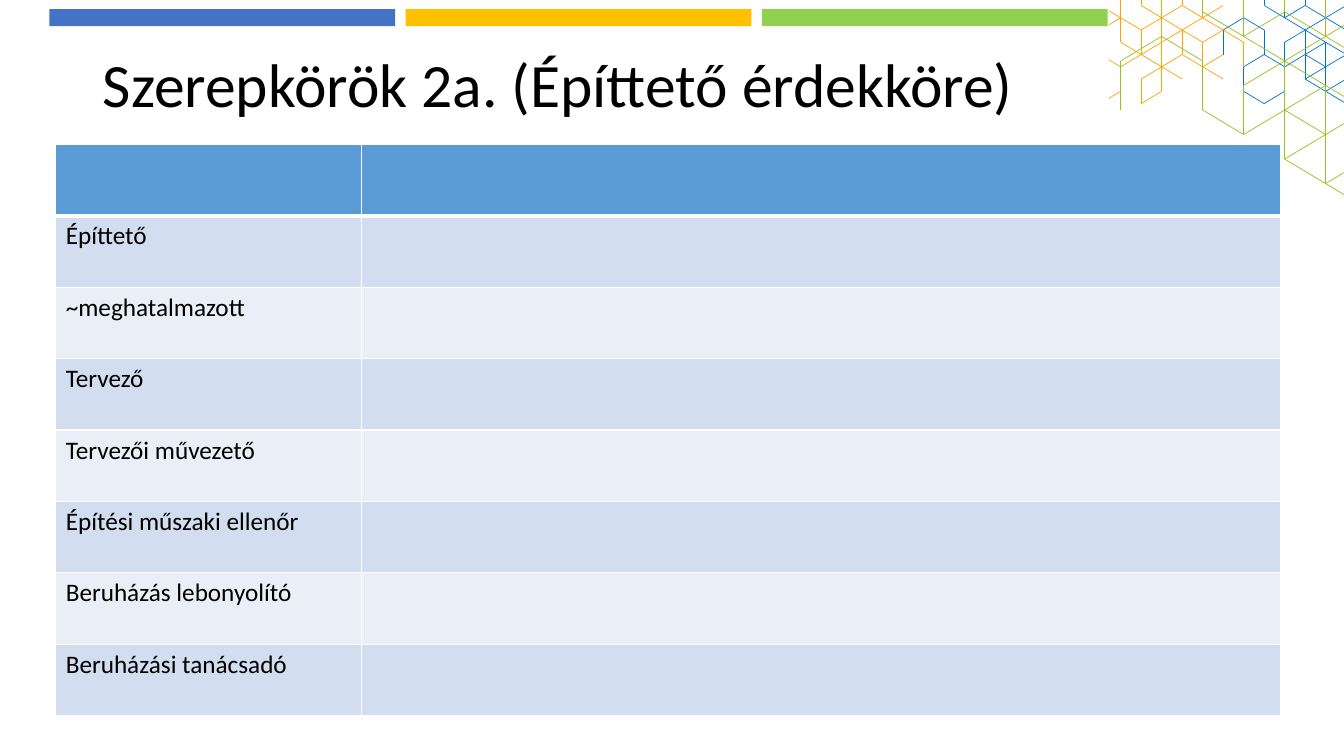
from dataclasses import dataclass

from lxml import etree
from pptx import Presentation
from pptx.dml.color import RGBColor
from pptx.enum.shapes import MSO_SHAPE
from pptx.enum.text import MSO_ANCHOR, MSO_AUTO_SIZE, PP_ALIGN
from pptx.oxml.ns import qn
from pptx.util import Emu, Pt

RECTANGLE = MSO_SHAPE.RECTANGLE
MIDDLE = MSO_ANCHOR.MIDDLE
NO_AUTOFIT = MSO_AUTO_SIZE.NONE
LEFT = PP_ALIGN.LEFT

PX = 1524  # EMU; the slide is 8000 x 4500 px
SLIDE_WIDTH, SLIDE_HEIGHT = 8000, 4500
PATTERN_LEFT = 6600
TITLE_ONLY = 5

Point = tuple[float, float]


@dataclass(frozen=True)
class Theme:
    font: str = "Calibri"
    title_size: int = 44
    cell_size: int = 18
    text: str = "000000"
    border: str = "FFFFFF"
    header: str = "5B9BD5"
    bands: tuple[str, str] = ("D2DEEF", "EAEFF7")
    bars: tuple[str, str, str] = ("4472C4", "FFC000", "92D050")
    blue_lattice: str = "0072CE"
    orange_lattice: str = "FFA300"
    green_lattice: str = "96C11E"
    lattice_line: float = 0.5
    thin_border: int = 1
    header_border: int = 3


THEME = Theme()


@dataclass(frozen=True)
class Lattice:
    """Strokes over a grid of (column, row) nodes; they may run past the edges."""
    colour: str
    top: int
    step_x: int
    step_y: int
    strokes: list[list[tuple[int, int]]]
    left: int = 6671

    def node(self, column: int, row: int) -> Point:
        return self.left + column * self.step_x, self.top + row * self.step_y


LATTICES = [
    Lattice(THEME.blue_lattice, 33, 122, 73, [
        [(7, -1), (7, 0), (11, 4), (9, 6), (11, 8)],
        [(9, 6), (9, 2)],
        [(9, 4), (10, 5)],
        [(11, 6), (10, 7), (10, 3), (8, 5), (7, 4), (6, 5), (6, 7), (7, 8), (8, 7)],
        [(7, 4), (7, 2), (6, 1), (5, 2), (5, 4)],
        [(8, 5), (8, 3), (11, 0)],
        [(8, -1), (8, 1), (9, 0), (11, 2)],
        [(9, -1), (9, 0)],
        [(10, -1), (10, 1)],
    ]),
    Lattice(THEME.orange_lattice, 33, 122, 73, [
        [(-1, 0), (1, 2), (3, 0), (6, 3), (6, 5)],
        [(0, -1), (0, 3), (3, 6)],
        [(-1, 2), (0, 1)],
        [(-1, 4), (0, 5), (5, 0)],
        [(-1, 8), (0, 7), (0, 5)],
        [(1, -1), (1, 0), (4, 3), (5, 2)],
        [(1, 2), (1, 4)],
        [(1, 8), (1, 6), (3, 4), (5, 6)],
        [(1, 8), (2, 7), (2, -1)],
        [(3, -1), (3, 0)],
        [(3, 2), (3, 4)],
        [(4, -1), (4, 1)],
        [(4, 3), (4, 5), (5, 4)],
    ]),
    Lattice(THEME.green_lattice, 71, 244, 146, [
        [(2, -1), (2, 0), (6, 4), (4, 6)],
        [(3, -1), (3, 1), (4, 0), (6, 2)],
        [(4, -1), (4, 0)],
        [(5, -1), (5, 1)],
        [(6, 0), (3, 3), (3, 5)],
        [(5, 3), (3, 5), (2, 4), (2, 2), (1, 1), (0, 2), (0, 4)],
        [(4, 2), (4, 6), (6, 8)],
        [(4, 4), (5, 5)],
        [(5, 3), (5, 7), (6, 6)],
    ]),
]

ROLES = ["Építtető", "~meghatalmazott", "Tervező", "Tervezői művezető",
         "Építési műszaki ellenőr", "Beruházás lebonyolító", "Beruházási tanácsadó"]


def px(length: float) -> Emu:
    return Emu(round(length * PX))


def rgb(colour: str) -> RGBColor:
    return RGBColor.from_string(colour)


def set_font(paragraph, size: int) -> None:
    paragraph.font.name = THEME.font
    paragraph.font.size = Pt(size)
    paragraph.font.bold = False
    paragraph.font.color.rgb = rgb(THEME.text)


def clip(start: Point, end: Point) -> tuple[Point, Point]:
    """Shorten an edge so that it stays within the pattern's corner of the slide."""
    (x, y), (dx, dy) = start, (end[0] - start[0], end[1] - start[1])
    first, last = 0.0, 1.0
    for delta, room in ((-dx, x - PATTERN_LEFT), (dx, SLIDE_WIDTH - x), (-dy, y)):
        if delta < 0:
            first = max(first, room / delta)
        elif delta > 0:
            last = min(last, room / delta)
    return (x + first * dx, y + first * dy), (x + last * dx, y + last * dy)


def draw_lattice(slide, lattice: Lattice) -> None:
    edges = [clip(lattice.node(*a), lattice.node(*b))
             for stroke in lattice.strokes for a, b in zip(stroke, stroke[1:])]
    builder = slide.shapes.build_freeform(*edges[0][0], scale=PX)
    for start, end in edges:
        builder.move_to(*start)
        builder.add_line_segments([end], close=False)
    pattern = builder.convert_to_shape()
    pattern.shadow.inherit = False
    pattern.fill.background()
    pattern.line.color.rgb = rgb(lattice.colour)
    pattern.line.width = Pt(THEME.lattice_line)


def draw_bars(slide) -> None:
    for index, colour in enumerate(THEME.bars):
        bar = slide.shapes.add_shape(RECTANGLE, px(294 + index * 2121), px(54), px(2058), px(102))
        bar.shadow.inherit = False
        bar.fill.solid()
        bar.fill.fore_color.rgb = rgb(colour)
        bar.line.fill.background()


def write_title(slide, text: str) -> None:
    title = slide.shapes.title
    title.left, title.top, title.width, title.height = px(552), px(240), px(6900), px(564)
    frame = title.text_frame
    frame.text = text
    frame.auto_size = NO_AUTOFIT
    frame.vertical_anchor = MIDDLE
    paragraph = frame.paragraphs[0]
    paragraph.alignment = LEFT
    paragraph.line_spacing = 0.9
    set_font(paragraph, THEME.title_size)


def format_cell(cell, fill: str, top: int, bottom: int) -> None:
    properties = cell._tc.get_or_add_tcPr()
    thin = THEME.thin_border
    for side, width in (("L", thin), ("R", thin), ("T", top), ("B", bottom)):
        line = etree.SubElement(properties, qn(f"a:ln{side}"), w=str(Pt(width)))
        solid = etree.SubElement(line, qn("a:solidFill"))
        etree.SubElement(solid, qn("a:srgbClr"), val=THEME.border)
    cell.fill.solid()
    cell.fill.fore_color.rgb = rgb(fill)
    set_font(cell.text_frame.paragraphs[0], THEME.cell_size)


def draw_roles_table(slide, roles: list[str]) -> None:
    widths, row_height = (1822, 5468), 425
    row_count = len(roles) + 1
    table = slide.shapes.add_table(row_count, len(widths), px(332), px(860),
                                   px(sum(widths)), px(row_count * row_height)).table
    for column, width in zip(table.columns, widths):
        column.width = px(width)
    for index, row in enumerate(table.rows):
        row.height = px(row_height)
        if index:
            row.cells[0].text = roles[index - 1]
        fill = THEME.bands[(index - 1) % 2] if index else THEME.header
        top = THEME.header_border if index == 1 else THEME.thin_border
        bottom = THEME.header_border if index == 0 else THEME.thin_border
        for cell in row.cells:
            format_cell(cell, fill, top, bottom)


def main() -> None:
    deck = Presentation()
    deck.slide_width, deck.slide_height = px(SLIDE_WIDTH), px(SLIDE_HEIGHT)
    slide = deck.slides.add_slide(deck.slide_layouts[TITLE_ONLY])
    for lattice in LATTICES:
        draw_lattice(slide, lattice)
    draw_bars(slide)
    write_title(slide, "Szerepkörök 2a. (Építtető érdekköre)")
    draw_roles_table(slide, ROLES)
    deck.save("out.pptx")


if __name__ == "__main__":
    main()
